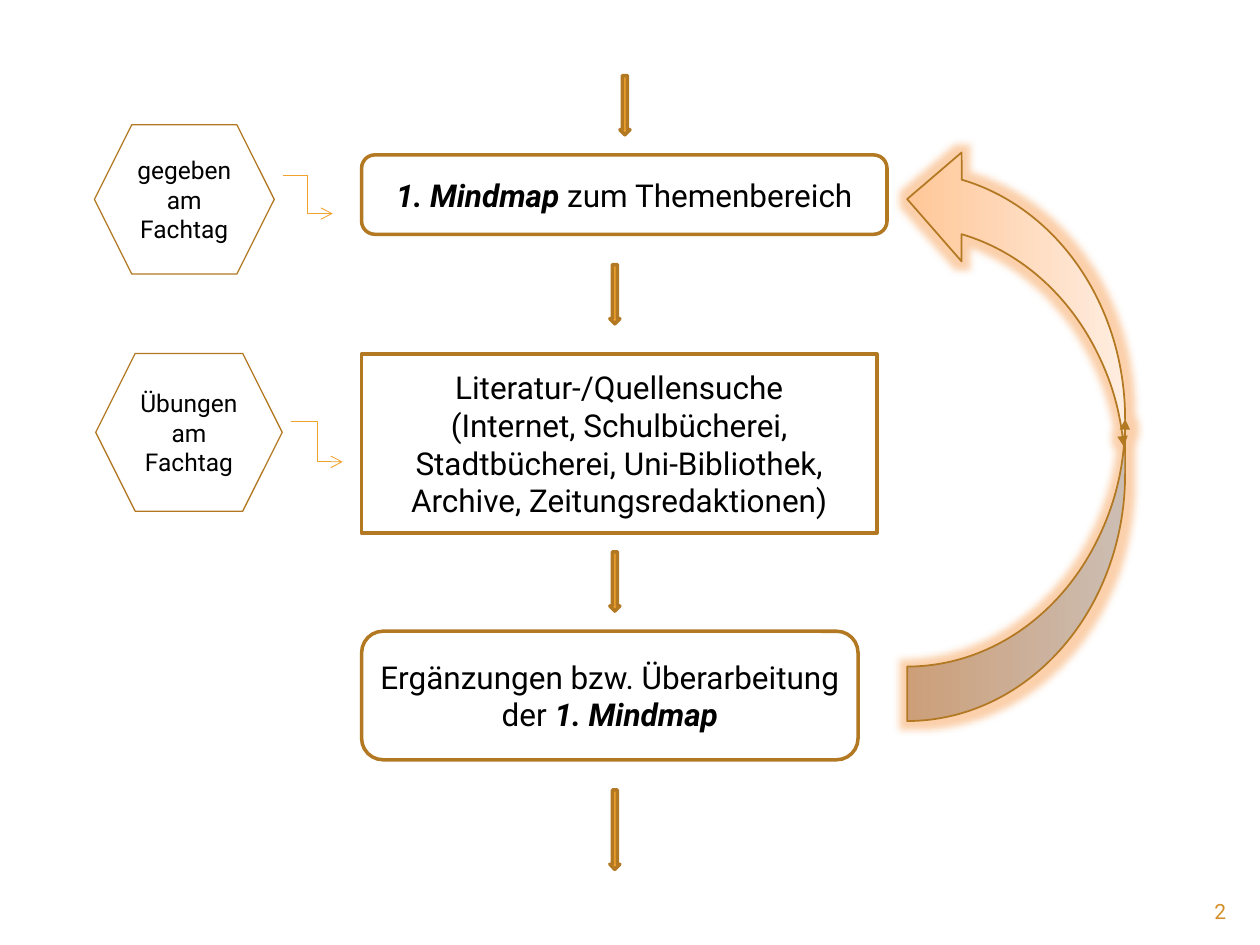
from dataclasses import dataclass

from lxml import etree
from pptx import Presentation
from pptx import util as u
from pptx.dml.color import RGBColor
from pptx.enum import shapes, text
from pptx.oxml.ns import qn

BROWN = RGBColor(0xB2, 0x78, 0x22)
AMBER = RGBColor(0xF0, 0xA2, 0x2E)
PEACH = RGBColor(0xFF, 0xC7, 0x98)
PALE = RGBColor(0xFF, 0xED, 0xE0)
GLOW = RGBColor(0xF5, 0x8A, 0x2E)
NUMBER = RGBColor(0xD4, 0x8F, 0x29)
WHITE = RGBColor(255, 255, 255)
BLACK = RGBColor(0, 0, 0)
FONT = "Roboto"
KIND = shapes.MSO_SHAPE
ALIGN = text.PP_ALIGN


@dataclass
class Box:
    x: int
    y: int
    w: int
    h: int

    def share(self, x, y, w, h):
        """Box inside this one, given in percent of its size."""
        return Box(int(self.x + self.w * x / 100), int(self.y + self.h * y / 100),
                   int(self.w * w / 100), int(self.h * h / 100))

    def bounds(self):
        return self.x, self.y, self.w, self.h


def add_shape(s, kind, box, fill=WHITE, width=2):
    sp = s.shapes.add_shape(kind, *box.bounds())
    sp.shadow.inherit = False
    sp.fill.solid()
    sp.fill.fore_color.rgb = fill
    sp.line.color.rgb = BROWN
    sp.line.width = u.Pt(width)
    return sp


def write(sp, paragraphs, size, color=BLACK, align=ALIGN.CENTER):
    """Each paragraph is a list of runs; a run starting with '1.' is emphasised."""
    tf = sp.text_frame
    tf.word_wrap = True
    for i, runs in enumerate(paragraphs):
        p = tf.add_paragraph() if i else tf.paragraphs[0]
        p.alignment = align
        for words in runs:
            r = p.add_run()
            r.text = words
            r.font.name, r.font.size = FONT, u.Pt(size)
            r.font.color.rgb = color
            if words.startswith("1."):
                r.font.bold = r.font.italic = True


def add_steps(s, box):
    """Column of working steps with the arrows between them."""
    steps = [
        (KIND.ROUNDED_RECTANGLE, 10, 100, 10, [["1. Mindmap ", "zum Themenbereich"]]),
        (KIND.RECTANGLE, 35.08, 98.08, 22.54,
         [["Literatur-/Quellensuche"],
          ["(Internet, Schulbücherei, Stadtbücherei, Uni-Bibliothek, "
           "Archive, Zeitungsredaktionen)"]]),
        (KIND.ROUNDED_RECTANGLE, 70, 94.48, 16.19,
         [["Ergänzungen bzw. Überarbeitung der ", "1. Mindmap"]]),
    ]
    for kind, top, width, height, words in steps:
        write(add_shape(s, kind, box.share(0, top, width, height)), words, 18)

    arrows = [(49.16, 0, 7.46), (47.24, 23.81, 7.46), (47.24, 60, 7.46), (47.24, 90, 10)]
    for left, top, height in arrows:
        add_shape(s, KIND.DOWN_ARROW, box.share(left, top, 1.92, height), AMBER)


def add_hint(s, box, words, link_top):
    """Hexagon with an elbow arrow towards its step."""
    sp = add_shape(s, KIND.HEXAGON, box.share(0, 0, 75.5, 100), width=0.75)
    write(sp, [[words]], 14)

    b = box.share(79.2, link_top, 20.8, 25.5)
    link = s.shapes.add_connector(shapes.MSO_CONNECTOR.ELBOW, b.x, b.y, b.x + b.w, b.y + b.h)
    link.line.color.rgb = AMBER
    link.line.width = u.Pt(0.5)
    sppr = link._element.spPr
    etree.SubElement(sppr.find(qn("a:ln")), qn("a:tailEnd"), type="arrow")
    etree.SubElement(sppr, qn("a:effectLst"))


def add_return_arrow(s, box):
    """Glowing curved arrow from the last step back to the first."""
    sp = add_shape(s, KIND.CURVED_LEFT_ARROW, box, width=1)
    sp.rotation = 180
    sp.fill.gradient()
    sp.fill.gradient_angle = 0
    for stop, color in zip(sp.fill.gradient_stops, (PEACH, PALE)):
        stop.color.rgb = color
    sppr = sp._element.spPr
    sppr.find(qn("a:xfrm")).set("flipH", "1")
    for end in ("a:headEnd", "a:tailEnd"):
        etree.SubElement(sppr.find(qn("a:ln")), qn(end), type="triangle")
    glow = etree.SubElement(sppr.find(qn("a:effectLst")), qn("a:glow"), rad=str(u.Pt(8)))
    color = etree.SubElement(glow, qn("a:srgbClr"), val=str(GLOW))
    etree.SubElement(color, qn("a:alpha"), val="40000")


def add_number(s, box):
    """Slide number in the lower right corner."""
    write(s.shapes.add_textbox(*box.bounds()), [["2"]], 12, NUMBER, ALIGN.RIGHT)


def main():
    prs = Presentation()
    prs.slide_width, prs.slide_height = u.Inches(10), u.Inches(7.5)
    s = prs.slides.add_slide(prs.slide_layouts[6])
    page = Box(0, 0, prs.slide_width, prs.slide_height)

    add_steps(s, page.share(28.7, 8, 41.7, 84))
    add_hint(s, page.share(7.5, 13.2, 18.9, 15.8), "gegeben am Fachtag", 34)
    add_hint(s, page.share(7.6, 37.4, 19.6, 16.7), "Übungen am Fachtag", 43.2)
    add_return_arrow(s, page.share(72, 15.3, 17.3, 61))
    add_number(s, page.share(90, 94.4, 8.3, 3.6))
    prs.save("out.pptx")


if __name__ == "__main__":
    main()
